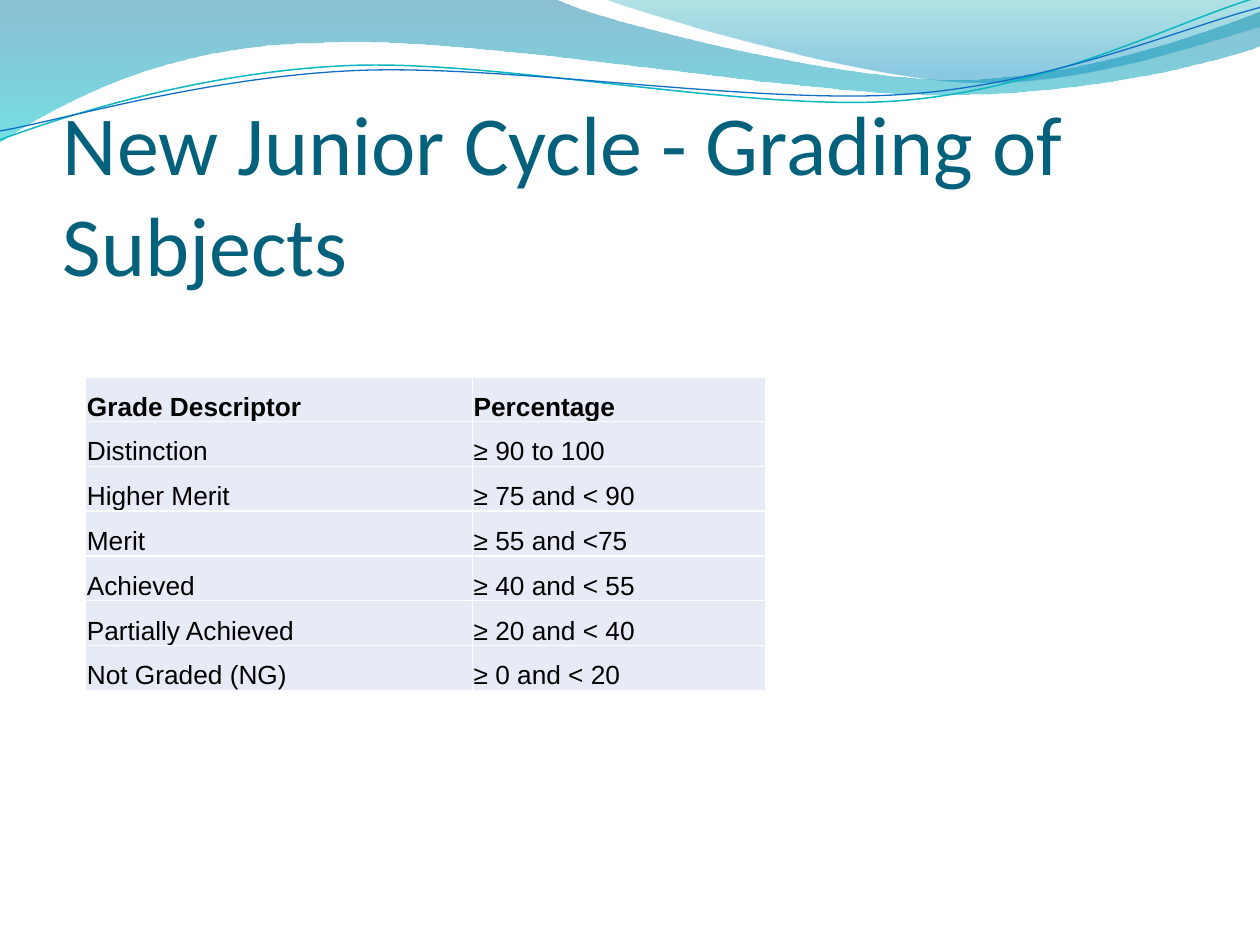
from math import cos, radians, sin

from lxml.etree import SubElement
from pptx import Presentation
from pptx.dml.color import RGBColor
from pptx.enum.text import MSO_ANCHOR
from pptx.oxml import parse_xml
from pptx.oxml.ns import nsdecls, qn
from pptx.util import Inches, Pt

COLORS = {
    "title": "04617B", "text": "000000", "cell": "E7EBF5", "border": "FFFFFF",
    "teal_line": "0AB8BF", "blue_line": "0F6FC6",
    "deep_blue": "0074A1", "cyan": "00C6CF", "teal": "00A1A9", "blue": "008BBF",
}

# Each path is a start point, then points (2 numbers) or Bézier curves (6 numbers)
# Bands: path, gradient stops (position %, colour, opacity %)
BANDS = [
    ([(0, -0.01), (4.4, -0.01), (4.76, 0.17, 6.64, 0.63, 7.58, 0.63),
      (8.53, 0.63, 9.58, 0.26, 10, 0.09), (10.01, 0.36),
      (9.83, 0.44, 8.7, 0.76, 7.46, 0.75), (6.22, 0.75, 3.82, 0.28, 2.57, 0.34),
      (1.29, 0.35, 0.46, 0.83, -0.01, 1.13)],
     [(0, "deep_blue", 45), (100, "cyan", 55)]),
    ([(4.79, -0.01), (5.09, 0.11, 6.82, 0.62, 7.69, 0.65),
      (8.56, 0.69, 9.61, 0.32, 10, 0.21), (10, 0)],
     [(0, "teal", 30), (80, "blue", 45)]),
]
# Lines: path, centre, colour, width in points
LINES = [
    ([(0, 1.11), (0.48, 0.93, 1.58, 0.57, 2.77, 0.52),
      (3.95, 0.47, 5.93, 0.89, 7.13, 0.8), (8.33, 0.71, 9.38, 0.15, 9.98, -0.02)],
     (4.99, 0.58), "teal_line", 0.85),
    ([(0, 1.04), (0.47, 0.96, 1.64, 0.61, 2.83, 0.56),
      (4.03, 0.51, 5.97, 0.83, 7.17, 0.75), (8.36, 0.67, 9.41, 0.21, 10, 0.06)],
     (5, 0.59), "blue_line", 0.75),
]
LINE_TILT = 2.7  # degrees, rising to the right
GRADES = [
    ("Grade Descriptor", "Percentage"),
    ("Distinction", "≥ 90 to 100"),
    ("Higher Merit", "≥ 75 and < 90"),
    ("Merit", "≥ 55 and <75"),
    ("Achieved", "≥ 40 and < 55"),
    ("Partially Achieved", "≥ 20 and < 40"),
    ("Not Graded (NG)", "≥ 0 and < 20"),
]


def rgb(name):
    return RGBColor.from_string(COLORS[name])


def style_run(r, font, size, color, bold=False):
    r.font.name, r.font.size, r.font.bold = font, Pt(size), bold
    r.font.color.rgb = rgb(color)


def set_margins(obj, left, top, right, bottom):
    obj.margin_left, obj.margin_top = Inches(left), Inches(top)
    obj.margin_right, obj.margin_bottom = Inches(right), Inches(bottom)


def level(path, center):
    """Turn a tilted path about its centre so that it lies level."""
    c, s = cos(radians(LINE_TILT)), sin(radians(LINE_TILT))
    cx, cy = center

    def turn(x, y):
        return (cx + (x - cx) * c - (y - cy) * s, cy + (x - cx) * s + (y - cy) * c)

    return [tuple(v for k in range(0, len(seg), 2) for v in turn(*seg[k:k + 2]))
            for seg in path]


def add_path(slide, left, top, path, close):
    points = [(left + Inches(seg[k]), top + Inches(seg[k + 1]))
              for seg in path for k in range(0, len(seg), 2)]
    fb = slide.shapes.build_freeform(*points[0])
    fb.add_line_segments(points[1:], close=close)
    s = fb.convert_to_shape()
    s.shadow.inherit = False
    # Join the three points of each curve into one Bézier segment
    steps = iter(list(s._element.iter(qn("a:lnTo"))))
    for seg in path[1:]:
        first = next(steps)
        if len(seg) == 6:
            first.tag = qn("a:cubicBezTo")
            for _ in range(2):
                step = next(steps)
                first.append(step[0])
                step.getparent().remove(step)
    return s


def fill_gradient(s, stops):
    """Fill from top to bottom with partly transparent colours."""
    gs = "".join(
        f'<a:gs pos="{pos * 1000}"><a:srgbClr val="{COLORS[color]}">'
        f'<a:alpha val="{alpha * 1000}"/></a:srgbClr></a:gs>'
        for pos, color, alpha in stops)
    grad = parse_xml(f'<a:gradFill {nsdecls("a")} rotWithShape="1"><a:gsLst>{gs}</a:gsLst>'
                     '<a:lin ang="5400000" scaled="0"/></a:gradFill>')
    s._element.spPr.find(qn("a:custGeom")).addnext(grad)


def add_waves(slide, left, top):
    for path, stops in BANDS:
        s = add_path(slide, left, top, path, close=True)
        fill_gradient(s, stops)
        s.line.fill.background()
    for path, center, color, width in LINES:
        s = add_path(slide, left, top, level(path, center), close=False)
        s.rotation = 360 - LINE_TILT
        s.fill.background()
        s.line.color.rgb = rgb(color)
        s.line.width = Pt(width)


def add_title(slide, left, top, width, height):
    tf = slide.shapes.add_textbox(left, top, width, height).text_frame
    tf.word_wrap = True
    tf.vertical_anchor = MSO_ANCHOR.BOTTOM
    set_margins(tf, 0, 0.05, 0, 0)
    tf.text = "New Junior Cycle - Grading of Subjects"
    style_run(tf.paragraphs[0].runs[0], "Calibri", 48, "title")


def set_borders(cell):
    tcPr = cell._tc.get_or_add_tcPr()
    for i, side in enumerate(("lnL", "lnR", "lnT", "lnB")):
        ln = SubElement(tcPr, qn(f"a:{side}"), w=str(Pt(1)))
        SubElement(SubElement(ln, qn("a:solidFill")), qn("a:srgbClr"), val=COLORS["border"])
        tcPr.insert(i, ln)


def add_grades(slide, left, top, width, height):
    table = slide.shapes.add_table(len(GRADES), 2, left, top, width, height).table
    table.columns[0].width = Inches(3.07)
    table.columns[1].width = width - Inches(3.07)
    for i, row in enumerate(GRADES):
        for j, text in enumerate(row):
            cell = table.cell(i, j)
            cell.text = text
            cell.vertical_anchor = MSO_ANCHOR.BOTTOM
            set_margins(cell, 0.01, 0.01, 0.01, 0)
            cell.fill.solid()
            cell.fill.fore_color.rgb = rgb("cell")
            set_borders(cell)
            style_run(cell.text_frame.paragraphs[0].runs[0], "Arial", 15, "text", bold=i == 0)


def main():
    prs = Presentation()
    prs.slide_width, prs.slide_height = Inches(10), Inches(7.5)
    slide = prs.slides.add_slide(prs.slide_layouts[6])
    add_waves(slide, 0, 0)
    add_title(slide, Inches(0.5), Inches(0.77), Inches(9), Inches(1.56))
    add_grades(slide, Inches(0.68), Inches(2.99), Inches(5.4), Inches(2.49))
    prs.save("out.pptx")


if __name__ == "__main__":
    main()
